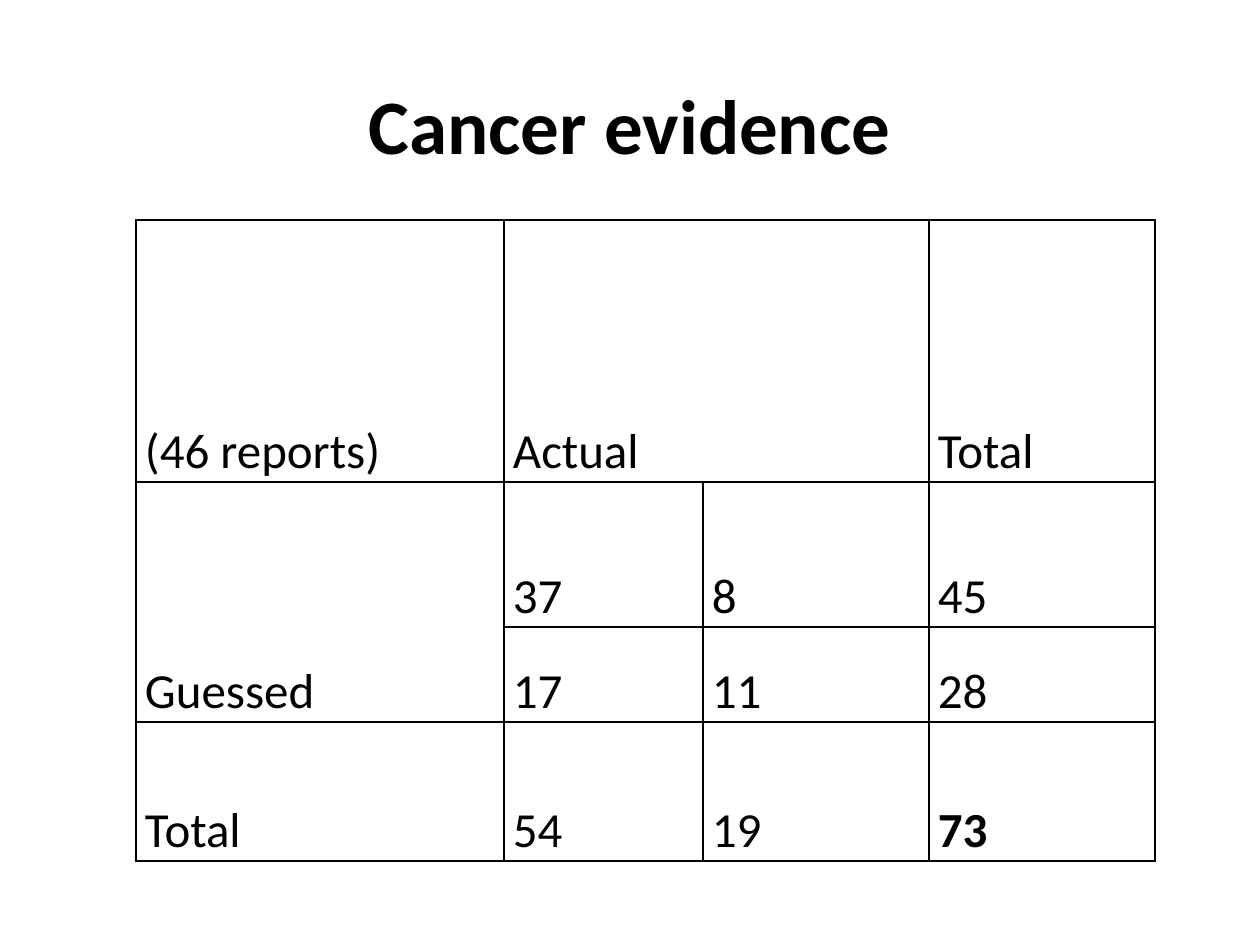
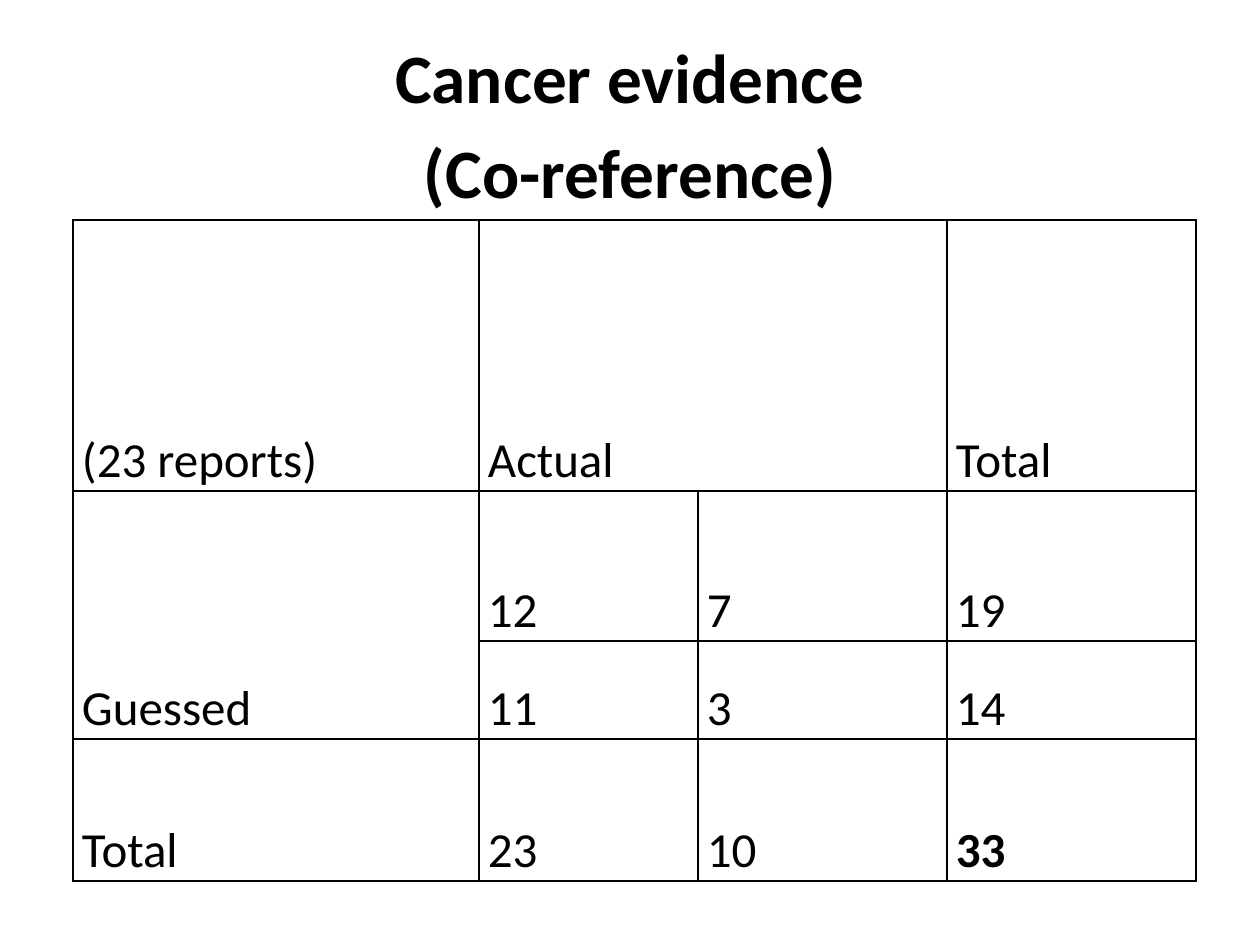
import pptx
import pptx.util
import pptx.dml.color
import pptx.enum.text
import pptx.oxml
import pptx.oxml.ns

BLACK = pptx.dml.color.RGBColor(0, 0, 0)
WHITE = pptx.dml.color.RGBColor(255, 255, 255)
FONT = "Calibri"
SCALE = 914400 / 126
ALIGN = pptx.enum.text.PP_ALIGN
ANCHOR = pptx.enum.text.MSO_ANCHOR

PARA = {"line_spacing": 1.15, "space_after": pptx.util.Pt(10)}
PAD = {"margin_left": 9, "margin_right": 9, "margin_top": 1, "margin_bottom": 0}
FLAGS = {"first_row": False, "horz_banding": False}


def px(num):
    return pptx.util.Emu(round(num * SCALE))


def apply(obj, form):
    for key, val in form.items():
        setattr(obj, key, val)


class Deck:
    """Holds the shared style and the slide being filled."""

    def __init__(self):
        self.file = pptx.Presentation()
        self.file.slide_width = px(1260)
        self.file.slide_height = px(945)
        self.slide = None

    def page(self):
        self.slide = self.file.slides.add_slide(self.file.slide_layouts[6])
        fill = self.slide.background.fill
        fill.solid()
        fill.fore_color.rgb = WHITE

    def label(self, frame, text, size, bold=False, align=ALIGN.LEFT):
        para = frame.paragraphs[0]
        para.text = text
        apply(para, PARA | {"alignment": align})
        for run in para.runs:
            apply(run.font, {"name": FONT, "size": pptx.util.Pt(size), "bold": bold})
            run.font.color.rgb = BLACK

    def title(self, text, size):
        box = self.slide.shapes.add_textbox(px(63), px(38), px(1134), px(158))
        frame = box.text_frame
        apply(frame, {"word_wrap": True, "vertical_anchor": ANCHOR.MIDDLE})
        self.label(frame, text, size, True, ALIGN.CENTER)

    def border(self, cell):
        """Draw a thin line on all four sides of a cell."""
        props = cell._tc.get_or_add_tcPr()
        for spot, side in enumerate("LRTB"):
            line = pptx.oxml.parse_xml(
                f'<a:ln{side} {pptx.oxml.ns.nsdecls("a")} w="12700"><a:solidFill>'
                f'<a:srgbClr val="{BLACK}"/></a:solidFill></a:ln{side}>')
            props.insert(spot, line)

    def table(self, left, cols, rows, cells):
        shape = self.slide.shapes.add_table(
            len(rows), len(cols), px(left), px(220), px(sum(cols)), px(sum(rows)))
        grid = shape.table
        apply(grid, FLAGS)
        for col, wide in zip(grid.columns, cols):
            col.width = px(wide)
        for row, high in zip(grid.rows, rows):
            row.height = px(high)
        grid.cell(0, 1).merge(grid.cell(0, 2))
        grid.cell(1, 0).merge(grid.cell(2, 0))
        last = grid.cell(len(rows) - 1, len(cols) - 1)
        pad = {key: px(val) for key, val in PAD.items()}
        for row, line in zip(grid.rows, cells):
            for cell, text in zip(row.cells, line):
                apply(cell, pad | {"vertical_anchor": ANCHOR.BOTTOM})
                cell.fill.background()
                self.border(cell)
                if text is not None:
                    self.label(cell.text_frame, str(text), 28, cell == last)


def matrix(count, hits):
    """Add row and column totals to the two-by-two counts."""
    sums = [sum(col) for col in zip(*hits)]
    top, low = hits
    return [[f"({count} reports)", "Actual", None, "Total"],
            ["Guessed", *top, sum(top)],
            [None, *low, sum(low)],
            ["Total", *sums, sum(sums)]]


def main():
    deck = Deck()

    deck.page()
    deck.title("Cancer evidence", 44)
    deck.table(136, [368, 199, 226, 226], [262, 145, 95, 139],
               matrix(46, [[37, 8], [17, 11]]))

    deck.page()
    deck.title("Cancer evidence\v(Co-reference)", 39.6)
    deck.table(73, [406, 219, 249, 249], [271, 150, 98, 142],
               matrix(23, [[12, 7], [11, 3]]))

    deck.file.save("out.pptx")


if __name__ == "__main__":
    main()
